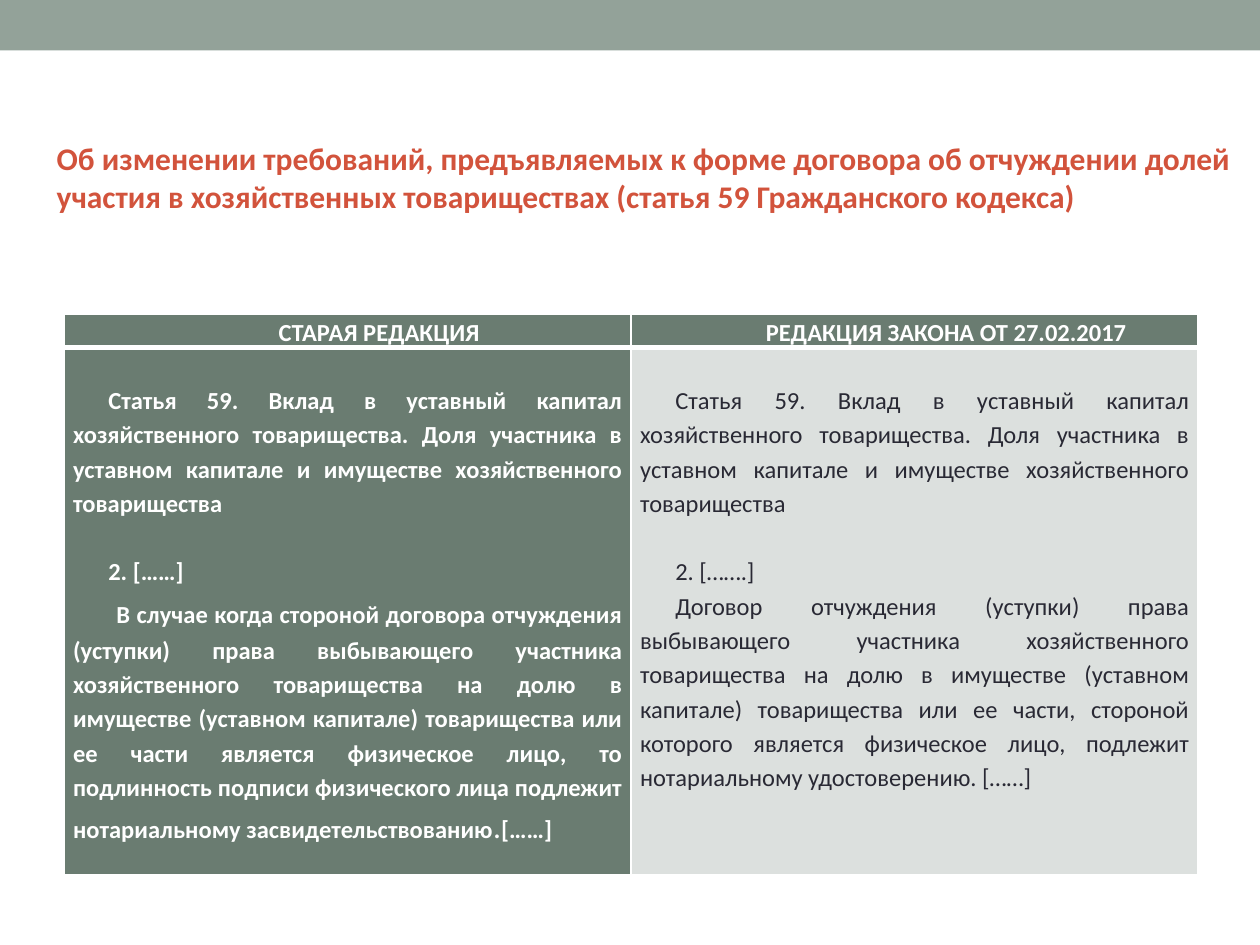
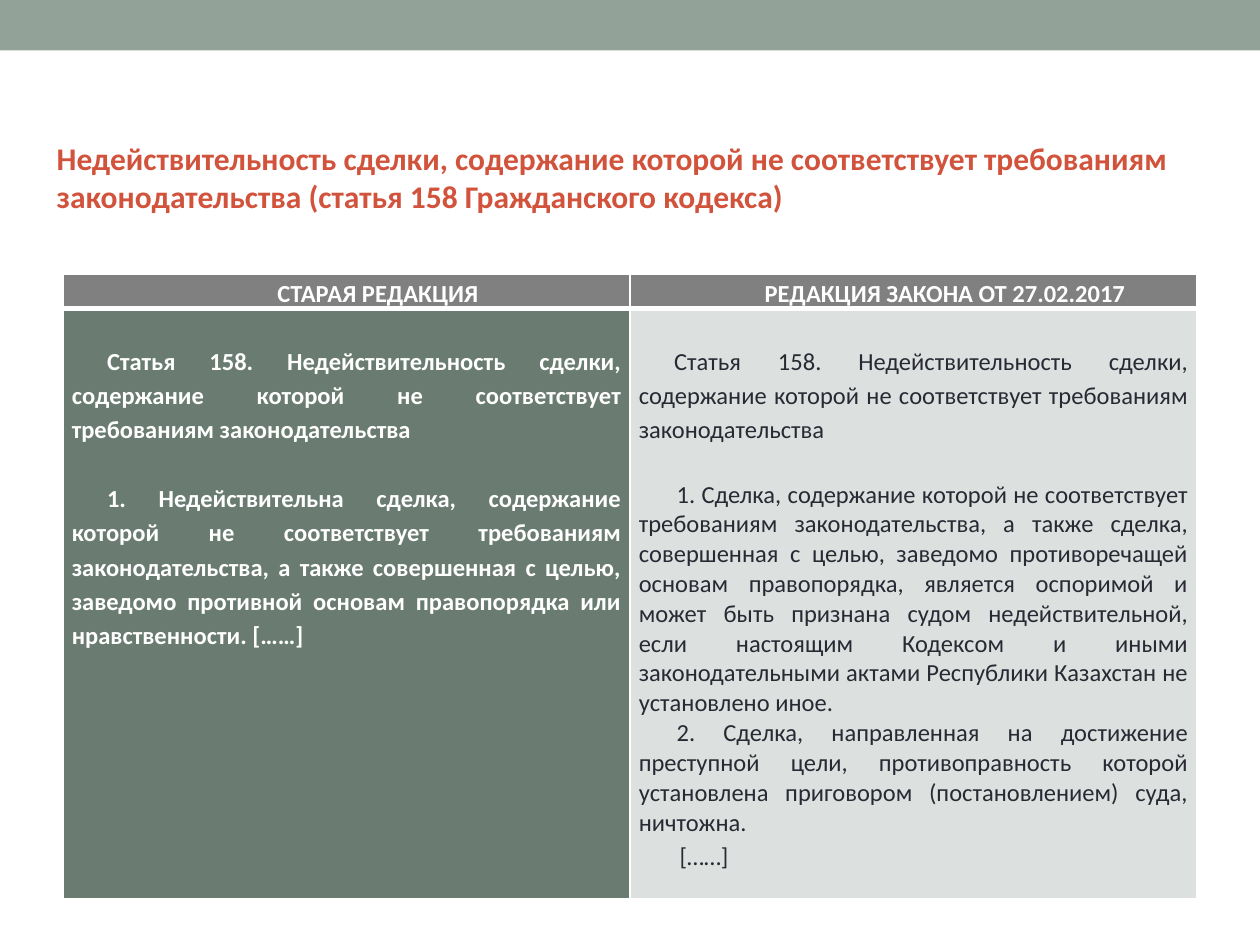
"""Build two slides that compare old and new wording of the Civil Code."""
from dataclasses import dataclass

from lxml import etree
from pptx import Presentation
from pptx.dml.color import RGBColor
from pptx.enum.shapes import MSO_SHAPE
from pptx.enum.text import MSO_ANCHOR, MSO_AUTO_SIZE, PP_ALIGN
from pptx.oxml.ns import qn
from pptx.util import Emu, Inches, Pt

RECTANGLE = MSO_SHAPE.RECTANGLE
MIDDLE = MSO_ANCHOR.MIDDLE
GROW = MSO_AUTO_SIZE.SHAPE_TO_FIT_TEXT
LEFT, CENTER, JUSTIFY = PP_ALIGN.LEFT, PP_ALIGN.CENTER, PP_ALIGN.JUSTIFY

WIDTH, HEIGHT = Inches(10), Inches(7.5)
GRID_COLUMNS, GRID_ROWS = 20, 15
TITLE_ONLY = 5
BAND_ID = "100"


@dataclass(frozen=True)
class Theme:
    """Colours, typeface, sizes and spacing shared by both slides."""

    font: str = "Calibri"
    title_size: int = 18
    text_size: int = 14
    band: str = "93A299"
    title: str = "D2533C"
    white: str = "FFFFFF"
    ink: str = "292934"
    green: str = "6A7C71"
    gray: str = "808080"
    pale: str = "DCE0DE"
    line_spacing: float = 1.15
    blank_line: float = 19.6
    thin: int = 1
    thick: int = 3


THEME = Theme()


@dataclass(frozen=True)
class Span:
    """A piece of text; a large one takes the title size without bold."""

    text: str
    large: bool = False


@dataclass(frozen=True)
class Clause:
    """A justified paragraph, optionally one blank line below the previous."""

    spans: tuple[Span, ...]
    gap: bool = False
    indent: float = 0.28
    spacing: float = THEME.line_spacing


@dataclass(frozen=True)
class Comparison:
    """The content of one slide and the grid place of its table."""

    title: tuple[str, ...]
    left: float
    top: float
    body_rows: float
    header_fill: str
    old: tuple[Clause, ...]
    new: tuple[Clause, ...]


@dataclass(frozen=True)
class CellLook:
    """Fill, text and edge settings of a table cell."""

    fill: str
    color: str
    bold: bool
    top_margin: float
    top_edge: int
    bottom_edge: int


def columns(count: float) -> Emu:
    """Return the width of a number of grid columns."""
    return Emu(round(WIDTH * count / GRID_COLUMNS))


def rows(count: float) -> Emu:
    """Return the height of a number of grid rows."""
    return Emu(round(HEIGHT * count / GRID_ROWS))


def clause(text: str, **options) -> Clause:
    """Return a clause made of one plain span."""
    return Clause((Span(text),), **options)


def set_font(font, size: float, color: str, bold: bool) -> None:
    """Apply the typeface, size, colour and weight."""
    font.name, font.size, font.bold = THEME.font, Pt(size), bold
    font.color.rgb = RGBColor.from_string(color)


def set_fill(target, color: str) -> None:
    """Give a shape or a cell a solid fill."""
    target.fill.solid()
    target.fill.fore_color.rgb = RGBColor.from_string(color)


def set_indent(para, left: float, first: float) -> None:
    """Set the left margin and first-line indent in inches."""
    properties = para._p.get_or_add_pPr()
    properties.set("marL", str(Inches(left)))
    properties.set("indent", str(Inches(first)))


def next_paragraph(frame, index: int):
    """Return the first paragraph of a frame, or a new one after it."""
    return frame.add_paragraph() if index else frame.paragraphs[0]


def add_band(deck, page) -> None:
    """Put the top band on the slide master, behind everything else."""
    band = page.shapes.add_shape(RECTANGLE, 0, 0, WIDTH, rows(0.8))
    band.shadow.inherit = False
    set_fill(band, THEME.band)
    band.line.fill.background()
    band.element.xpath("p:nvSpPr/p:cNvPr")[0].set("id", BAND_ID)
    deck.slide_master.shapes.element.insert(2, band.element)


def write_title(page, lines: tuple[str, ...]) -> None:
    """Place and format the title."""
    box = page.shapes.title
    box.left, box.top = columns(0.7), rows(2.1)
    box.width, box.height = columns(19.06), rows(1.42)
    set_fill(box, THEME.white)
    frame = box.text_frame
    frame.word_wrap, frame.auto_size = True, GROW
    frame.vertical_anchor = MIDDLE
    for index, line in enumerate(lines):
        para = next_paragraph(frame, index)
        para.text, para.alignment = line, LEFT
        para.space_before = Pt(0)
        set_font(para.font, THEME.title_size, THEME.title, True)


def style_cell(cell, look: CellLook) -> None:
    """Set margins, white edges and fill of a cell."""
    cell.margin_left = cell.margin_right = Inches(0.07)
    cell.margin_top, cell.margin_bottom = Inches(look.top_margin), 0
    properties = cell._tc.get_or_add_tcPr()
    edges = {"L": THEME.thin, "R": THEME.thin,
             "T": look.top_edge, "B": look.bottom_edge}
    for side, width in edges.items():
        edge = etree.SubElement(properties, qn(f"a:ln{side}"), w=str(Pt(width)))
        paint = etree.SubElement(edge, qn("a:solidFill"))
        etree.SubElement(paint, qn("a:srgbClr"), val=THEME.white)
    set_fill(cell, look.fill)


def write_header(cell, text: str, look: CellLook) -> None:
    """Write a centred column heading."""
    style_cell(cell, look)
    para = cell.text_frame.paragraphs[0]
    para.text, para.alignment = text, CENTER
    para.line_spacing = THEME.line_spacing
    set_indent(para, 0.5, 0)
    set_font(para.font, THEME.text_size, look.color, look.bold)


def write_clauses(cell, clauses: tuple[Clause, ...], look: CellLook) -> None:
    """Write the justified clauses of one wording."""
    style_cell(cell, look)
    for index, item in enumerate(clauses):
        para = next_paragraph(cell.text_frame, index)
        para.alignment, para.line_spacing = JUSTIFY, item.spacing
        para.space_before = Pt(THEME.blank_line if item.gap else 0)
        set_indent(para, 0, item.indent)
        set_font(para.font, THEME.text_size, look.color, look.bold)
        for span in item.spans:
            run = para.add_run()
            run.text = span.text
            size = THEME.title_size if span.large else THEME.text_size
            set_font(run.font, size, look.color, look.bold and not span.large)


def add_comparison(page, item: Comparison) -> None:
    """Draw the two-column table of old and new wording."""
    heights = (0.54, item.body_rows)
    table = page.shapes.add_table(
        2, 2, columns(item.left), rows(item.top), columns(18), rows(sum(heights))
    ).table
    table.horz_banding = False
    for column in table.columns:
        column.width = columns(9)
    for row, height in zip(table.rows, heights):
        row.height = rows(height)
    header = CellLook(item.header_fill, THEME.white, True, 0, THEME.thin, THEME.thick)
    old = CellLook(THEME.green, THEME.white, True, 0.27, THEME.thick, THEME.thin)
    new = CellLook(THEME.pale, THEME.ink, False, 0.27, THEME.thick, THEME.thin)
    for index, heading in enumerate(HEADINGS):
        write_header(table.cell(0, index), heading, header)
    write_clauses(table.cell(1, 0), item.old, old)
    write_clauses(table.cell(1, 1), item.new, new)


HEADINGS = ("СТАРАЯ РЕДАКЦИЯ", "РЕДАКЦИЯ ЗАКОНА ОТ 27.02.2017")
ARTICLE_59 = clause(
    "Статья 59. Вклад в уставный капитал хозяйственного товарищества. "
    "Доля участника в уставном капитале и имуществе хозяйственного товарищества"
)
ARTICLE_158 = clause(
    "Статья 158. Недействительность сделки, содержание которой "
    "не соответствует требованиям законодательства"
)

COMPARISONS = (
    Comparison(
        title=(
            "Об изменении требований, предъявляемых к форме договора об отчуждении долей",
            "участия в хозяйственных товариществах (статья 59 Гражданского кодекса)",
        ),
        left=1.02, top=4.98, body_rows=8.36, header_fill=THEME.green,
        old=(
            ARTICLE_59,
            clause("2. [……]", gap=True),
            Clause((
                Span(" ", large=True),
                Span(
                    "В случае когда стороной договора отчуждения (уступки) права "
                    "выбывающего участника хозяйственного товарищества на долю в "
                    "имуществе (уставном капитале) товарищества или ее части является "
                    "физическое лицо, то подлинность подписи физического лица подлежит "
                    "нотариальному засвидетельствованию"
                ),
                Span(".", large=True),
                Span("[……]"),
            )),
        ),
        new=(
            ARTICLE_59,
            clause("2. […….]", gap=True),
            clause(
                "Договор отчуждения (уступки) права выбывающего участника "
                "хозяйственного товарищества на долю в имуществе (уставном капитале) "
                "товарищества или ее части, стороной которого является физическое "
                "лицо, подлежит нотариальному удостоверению. [……]"
            ),
        ),
    ),
    Comparison(
        title=(
            "Недействительность сделки, содержание которой не соответствует "
            "требованиям законодательства (статья 158 Гражданского кодекса)",
        ),
        left=1, top=4.36, body_rows=9.36, header_fill=THEME.gray,
        old=(
            ARTICLE_158,
            clause(
                "1. Недействительна сделка, содержание которой не соответствует "
                "требованиям законодательства, а также совершенная с целью, заведомо "
                "противной основам правопорядка или нравственности. [……]",
                gap=True,
            ),
        ),
        new=(
            ARTICLE_158,
            clause(
                "1. Сделка, содержание которой не соответствует требованиям "
                "законодательства, а также сделка, совершенная с целью, заведомо "
                "противоречащей основам правопорядка, является оспоримой и может быть "
                "признана судом недействительной, если настоящим Кодексом и иными "
                "законодательными актами Республики Казахстан не установлено иное.",
                gap=True, indent=0.3, spacing=1.0,
            ),
            clause(
                "2. Сделка, направленная на достижение преступной цели, "
                "противоправность которой установлена приговором (постановлением) "
                "суда, ничтожна.",
                indent=0.3, spacing=1.0,
            ),
            clause(" [……]"),
        ),
    ),
)


def main() -> None:
    """Build and save the deck."""
    deck = Presentation()
    deck.slide_width, deck.slide_height = WIDTH, HEIGHT
    for index, item in enumerate(COMPARISONS):
        page = deck.slides.add_slide(deck.slide_layouts[TITLE_ONLY])
        if index == 0:
            add_band(deck, page)
        write_title(page, item.title)
        add_comparison(page, item)
    deck.save("out.pptx")


if __name__ == "__main__":
    main()
